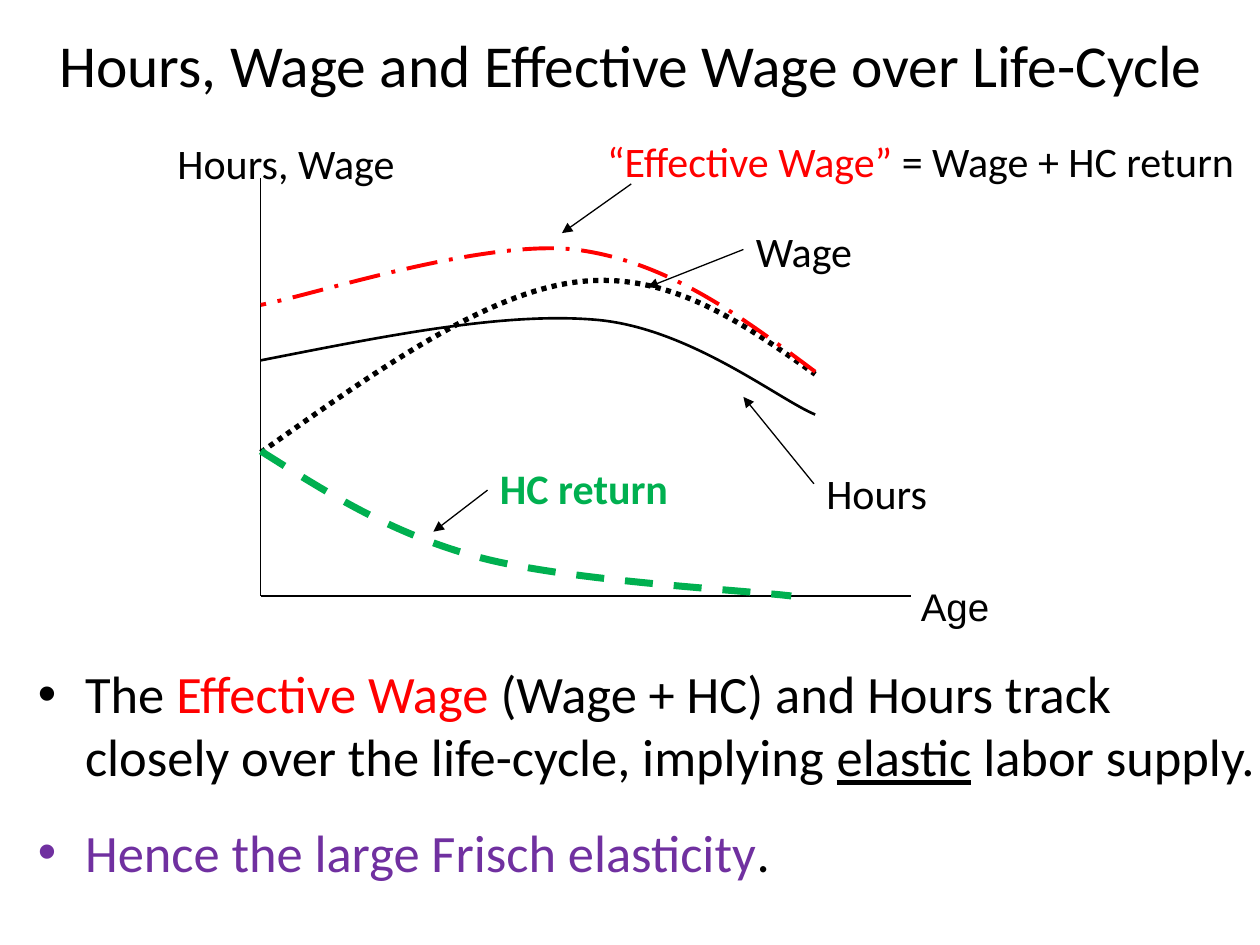
from lxml.etree import SubElement
from pptx import Presentation
from pptx.dml.color import RGBColor
from pptx.enum.dml import MSO_LINE
from pptx.enum.shapes import MSO_CONNECTOR
from pptx.enum.text import MSO_ANCHOR, MSO_AUTO_SIZE, PP_ALIGN
from pptx.oxml.ns import qn
from pptx.util import Inches, Pt

BLACK, RED, GREEN, PURPLE = "000000", "FF0000", "00B050", "7030A0"
LEFT_SIDE = 1

TITLE = "Hours, Wage and Effective Wage over Life-Cycle"
# Each bullet is a list of (text, colour, underlined)
BULLETS = [
    [("The ", BLACK, False), ("Effective Wage ", RED, False),
     ("(Wage + HC) and Hours track closely over the life-cycle, implying ", BLACK, False),
     ("elastic", BLACK, True), (" labor supply.", BLACK, False)],
    [("Hence the large Frisch elasticity", PURPLE, False), (".", BLACK, False)],
]

ORIGIN, AGE_END, VALUE_END = (2.07, 4.73), (7.23, 4.73), (2.07, 1.41)

# Start point, then cubic Bézier points (two controls and an end, twice); colour, width, dash
CURVES = [
    ((2.07, 3.59), [(2.95, 2.97), (3.82, 2.34), (4.56, 2.24),
                    (5.29, 2.14), (5.88, 2.55), (6.47, 2.97)],
     BLACK, 3, MSO_LINE.ROUND_DOT),
    ((2.07, 3.58), [(2.58, 3.9), (3.09, 4.23), (3.79, 4.42),
                    (4.49, 4.61), (5.86, 4.68), (6.28, 4.73)],
     GREEN, 4, MSO_LINE.DASH),
    ((6.47, 2.95), [(5.88, 2.51), (5.29, 2.07), (4.56, 1.98),
                    (3.82, 1.9), (2.49, 2.34), (2.07, 2.42)],
     RED, 2.25, MSO_LINE.LONG_DASH_DOT),
    ((2.07, 2.86), [(3.04, 2.67), (4.01, 2.47), (4.75, 2.54),
                    (5.48, 2.61), (6.18, 3.17), (6.47, 3.29)],
     BLACK, 1.5, None),
]

# Box, runs of (text, colour), bold, arrow tip at the curve
CURVE_LABELS = [
    ((3.87, 3.56, 1.67, 0.66), [("HC return", GREEN)], True, (3.44, 4.22)),
    ((6.46, 3.6, 1.23, 0.48), [("Hours", BLACK)], False, (5.9, 3.15)),
    ((5.9, 1.68, 1.23, 0.6), [("Wage", BLACK)], False, (5.14, 2.28)),
]
EFFECTIVE_WAGE = [("“Effective Wage”", RED), (" = Wage + HC return", BLACK)]
EFFECTIVE_ARROW = ((5.01, 1.46), (4.46, 1.85))


def rgb(colour):
    return RGBColor.from_string(colour)


def add_run(paragraph, text, size=24, colour=BLACK, font="Calibri", bold=False, underline=False):
    run = paragraph.add_run()
    run.text = text
    run.font.name, run.font.size = font, Pt(size)
    run.font.bold, run.font.underline = bold, underline
    run.font.color.rgb = rgb(colour)


def place(shape, *box):
    shape.left, shape.top, shape.width, shape.height = map(Inches, box)


def add_label(slide, box, runs, line_spacing=1.15, space_after=10, **style):
    label = slide.shapes.add_textbox(*map(Inches, box))
    label.text_frame.word_wrap = True
    paragraph = label.text_frame.paragraphs[0]
    paragraph.line_spacing, paragraph.space_after = line_spacing, Pt(space_after)
    for text, colour in runs:
        add_run(paragraph, text, colour=colour, **style)
    return label


def add_line(slide, start, end, arrow=False):
    line = slide.shapes.add_connector(MSO_CONNECTOR.STRAIGHT, *map(Inches, start + end))
    line.line.color.rgb = rgb(BLACK)
    line.line.width = Pt(0.75)
    if arrow:
        SubElement(line.line._get_or_add_ln(), qn("a:tailEnd"), type="triangle")
    SubElement(line._element.spPr, qn("a:effectLst"))
    return line


def bend(curve):
    """Turn every three straight segments of a freeform into one cubic Bézier segment."""
    segments = list(curve._element.iter(qn("a:lnTo")))
    for first in range(0, len(segments), 3):
        cubic = SubElement(segments[first].getparent(), qn("a:cubicBezTo"))
        for segment in segments[first:first + 3]:
            segment.getparent().remove(segment)
            cubic.append(segment[0])


def add_curve(slide, start, points, colour, width, dash):
    builder = slide.shapes.build_freeform(*map(Inches, start))
    builder.add_line_segments([tuple(map(Inches, point)) for point in points], close=False)
    curve = builder.convert_to_shape()
    bend(curve)
    curve.shadow.inherit = False
    curve.fill.background()
    curve.line.color.rgb = rgb(colour)
    curve.line.width = Pt(width)
    if dash is not None:
        curve.line.dash_style = dash


def add_title_and_bullets(slide):
    title, body = slide.placeholders
    place(title, 0.28, 0, 9.45, 1.01)
    title.text_frame.vertical_anchor = MSO_ANCHOR.MIDDLE
    heading = title.text_frame.paragraphs[0]
    heading.alignment = PP_ALIGN.CENTER
    add_run(heading, TITLE, size=34)

    place(body, 0.2, 5.2, 9.92, 2.3)
    frame = body.text_frame
    frame.auto_size = MSO_AUTO_SIZE.NONE
    for index, bullet in enumerate(BULLETS):
        paragraph = frame.add_paragraph() if index else frame.paragraphs[0]
        paragraph.space_before = Pt(18.5 if index else 0)
        for text, colour, underline in bullet:
            add_run(paragraph, text, size=30, colour=colour, underline=underline)


def add_diagram(slide):
    for axis_end in (VALUE_END, AGE_END):
        add_line(slide, ORIGIN, axis_end)
    for curve in CURVES:
        add_curve(slide, *curve)

    add_label(slide, (1.31, 0.98, 2.29, 0.43), [("Hours, Wage", BLACK)])
    add_label(slide, (7.21, 4.58, 0.8, 0.47), [("Age", BLACK)],
              line_spacing=1.0, space_after=0, size=22, font="Arial")
    add_label(slide, (4.72, 0.97, 5.28, 0.73), EFFECTIVE_WAGE)
    add_line(slide, *EFFECTIVE_ARROW, arrow=True)
    for box, runs, bold, tip in CURVE_LABELS:
        label = add_label(slide, box, runs, bold=bold)
        arrow = add_line(slide, box[:2], tip, arrow=True)
        arrow.begin_connect(label, LEFT_SIDE)


def main():
    prs = Presentation()
    prs.slide_width, prs.slide_height = Inches(10), Inches(7.5)
    slide = prs.slides.add_slide(prs.slide_layouts[1])
    add_title_and_bullets(slide)
    add_diagram(slide)
    prs.save("out.pptx")


if __name__ == "__main__":
    main()
